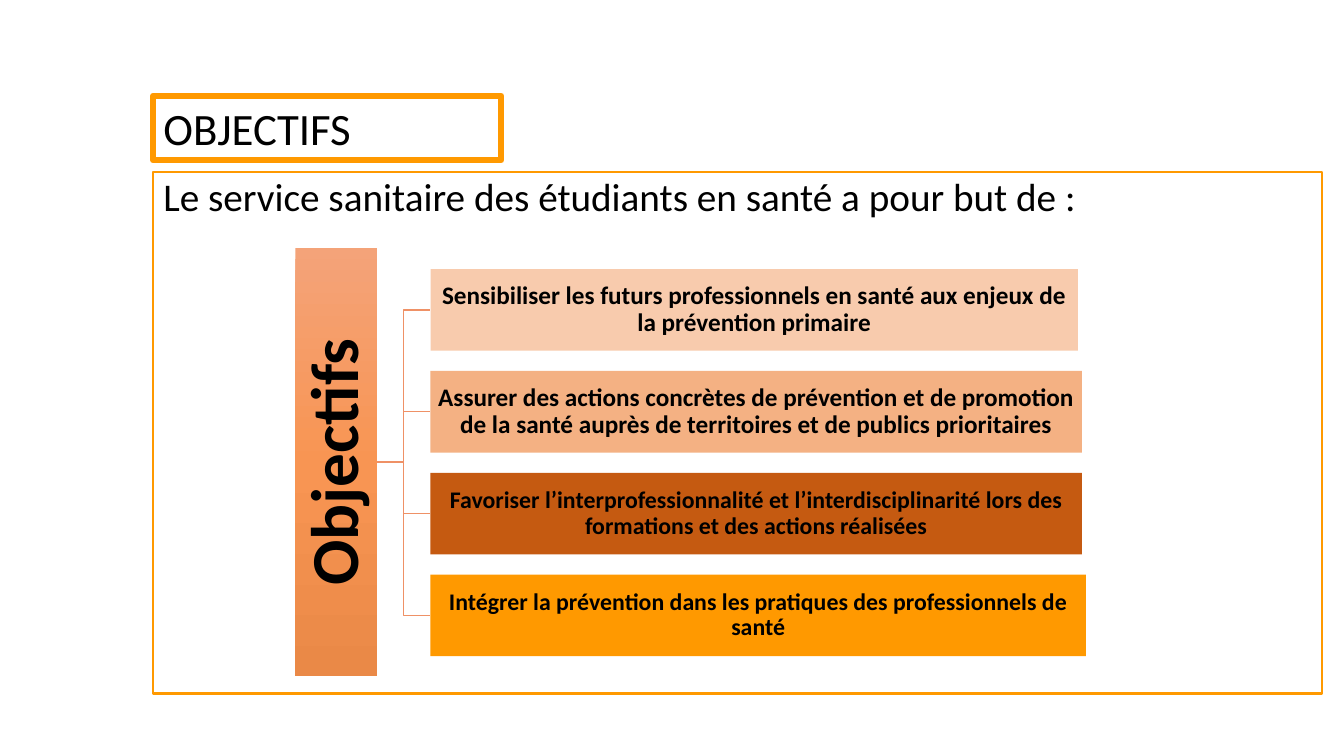
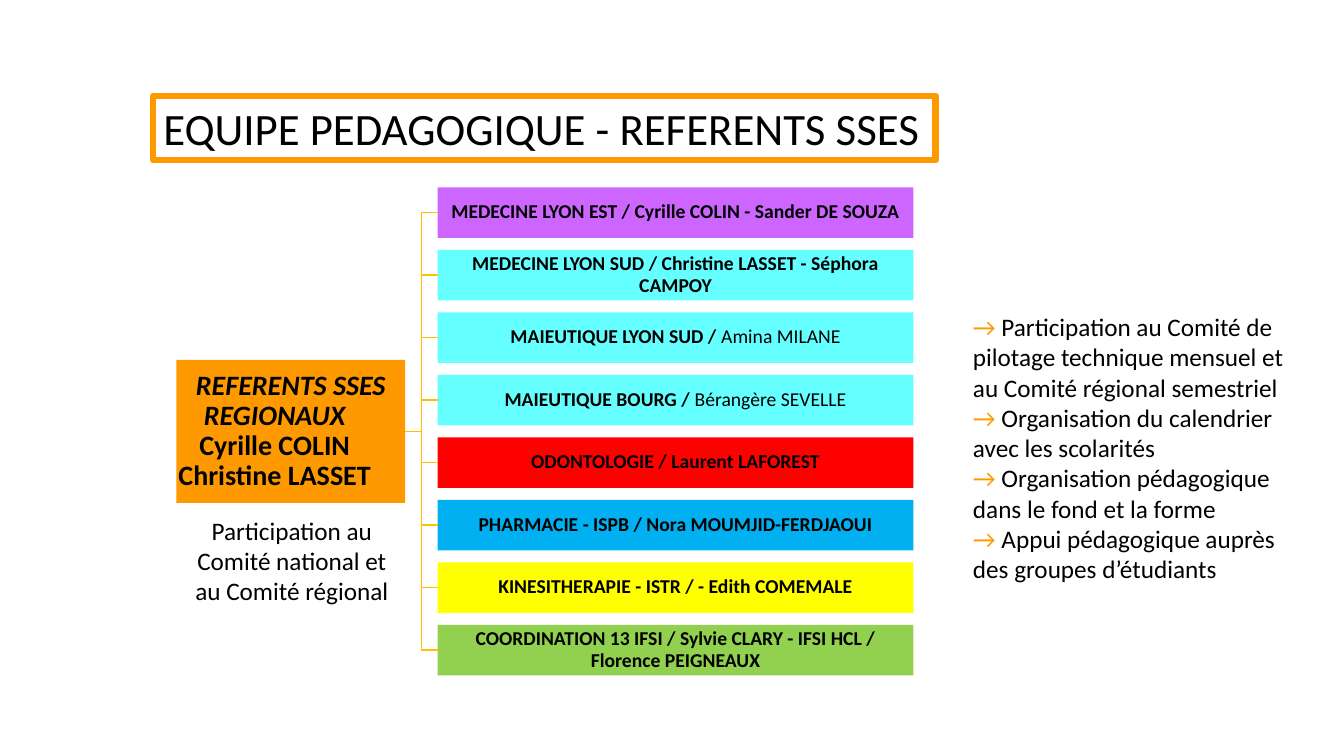
"""Build two slides on the aims and teaching team of the student health service."""
from copy import deepcopy

from lxml import etree
from pptx import Presentation
from pptx.dml.color import RGBColor
from pptx.enum import shapes, text
from pptx.oxml.ns import qn
from pptx.util import Inches, Pt

COLORS = {
    "text": "000000", "accent": "FF9900", "aim_line": "EF9166", "team_line": "FFC000",
    "peach": "F8CBAD", "apricot": "F4B183", "rust": "C55A11", "violet": "CC66FF",
    "cyan": "66FFFF", "red": "FF0000", "blue": "00B0F0", "yellow": "FFFF00",
    "green": "92D050",
}
HUB_GRADIENT = [(0, "F4A379"), (0.5, "F89553"), (1, "EA8947")]
LEFT, TITLE_TOP, TITLE_HEIGHT = 1.52, 0.95, 0.64
CENTER, START = text.PP_ALIGN.CENTER, text.PP_ALIGN.LEFT

INTRO = "Le service sanitaire des étudiants en santé a pour but de :"
AIMS = [
    ("Sensibiliser les futurs professionnels en santé aux enjeux de la prévention primaire",
     "peach", 6.42, 18),
    ("Assurer des actions concrètes de prévention et de promotion de la santé auprès de "
     "territoires et de publics prioritaires", "apricot", 6.46, 18),
    ("Favoriser l’interprofessionnalité et l’interdisciplinarité lors des formations et des "
     "actions réalisées", "rust", 6.46, 17),
    ("Intégrer la prévention dans les pratiques des professionnels de santé",
     "accent", 6.5, 17),
]
REGIONAL = [("REFERENTS SSES", True), ("REGIONAUX", True),
            ("Cyrille COLIN", False), ("Christine LASSET", False)]
REGIONAL_ROLE = "Participation au Comité national et au Comité régional"
REFERENTS = [
    ("MEDECINE LYON EST / Cyrille COLIN - Sander DE SOUZA", "", "violet"),
    ("MEDECINE LYON SUD / Christine LASSET - Séphora CAMPOY", "", "cyan"),
    ("MAIEUTIQUE LYON SUD / ", "Amina MILANE", "cyan"),
    ("MAIEUTIQUE BOURG / ", "Bérangère SEVELLE", "cyan"),
    ("ODONTOLOGIE / Laurent LAFOREST", "", "red"),
    ("PHARMACIE - ISPB / Nora MOUMJID-FERDJAOUI", "", "blue"),
    ("KINESITHERAPIE - ISTR / - Edith COMEMALE", "", "yellow"),
    ("COORDINATION 13 IFSI / Sylvie CLARY - IFSI HCL / Florence PEIGNEAUX", "", "green"),
]
MISSIONS = [
    "Participation au Comité de pilotage technique mensuel et au Comité régional semestriel",
    "Organisation du calendrier avec les scolarités",
    "Organisation pédagogique dans le fond et la forme",
    "Appui pédagogique auprès des groupes d’étudiants",
]


def rgb(name):
    return RGBColor.from_string(COLORS[name])


def apply(target, formats):
    for name, value in formats.items():
        setattr(target, name, value)


def place(shape, left, top, width, height):
    apply(shape, {"left": Inches(left), "top": Inches(top),
                  "width": Inches(width), "height": Inches(height)})


def outline(shape, width):
    shape.line.color.rgb = rgb("accent")
    shape.line.width = Pt(width)


def write(frame, paragraphs, size, align=START, spacing=1.0, inset=None,
          anchor=text.MSO_ANCHOR.TOP):
    """Fill a frame with paragraphs, each a list of (text, font formats, colour)."""
    apply(frame, {"word_wrap": True, "auto_size": text.MSO_AUTO_SIZE.NONE,
                  "vertical_anchor": anchor})
    if inset is not None:
        apply(frame, {f"margin_{side}": Inches(inset)
                      for side in ("left", "right", "top", "bottom")})
    for index, runs in enumerate(paragraphs):
        paragraph = frame.add_paragraph() if index else frame.paragraphs[0]
        properties = paragraph._p.get_or_add_pPr()
        properties.set("marL", "0")
        properties.set("indent", "0")
        etree.SubElement(properties, qn("a:buNone"))
        apply(paragraph, {"alignment": align, "line_spacing": spacing,
                          "space_before": Pt(0), "space_after": Pt(0)})
        for words, formats, color in runs:
            run = paragraph.add_run()
            run.text = words
            apply(run.font, {"name": "Calibri", "size": Pt(size), **formats})
            run.font.color.rgb = rgb(color)


def add_slide(deck, title, title_width):
    slide = deck.slides.add_slide(deck.slide_layouts[1])
    heading = slide.shapes.title
    place(heading, LEFT, TITLE_TOP, title_width, TITLE_HEIGHT)
    outline(heading, 4.5)
    write(heading.text_frame, [[(title, {}, "text")]], 32, anchor=text.MSO_ANCHOR.MIDDLE)
    return slide, slide.placeholders[1]


def add_box(slide, bounds, color, paragraphs, size):
    box = slide.shapes.add_shape(shapes.MSO_SHAPE.RECTANGLE, *map(Inches, bounds))
    box.shadow.inherit = False
    box.fill.solid()
    box.fill.fore_color.rgb = rgb(color)
    box.line.fill.background()
    write(box.text_frame, paragraphs, size, CENTER, 0.9, 0.01, text.MSO_ANCHOR.MIDDLE)
    return box


def shade(box, stops):
    box.fill.gradient()
    box.fill.gradient_angle = 270
    stop_list = box._element.spPr.find(qn("a:gradFill")).find(qn("a:gsLst"))
    stop_list.append(deepcopy(stop_list[0]))
    for stop, (position, color) in zip(box.fill.gradient_stops, stops):
        stop.position = position
        stop.color.rgb = RGBColor.from_string(color)


def join(slide, hub, branches, color):
    for branch in branches:
        link = slide.shapes.add_connector(shapes.MSO_CONNECTOR.ELBOW, 0, 0, 0, 0)
        link.begin_connect(hub, 3)
        link.end_connect(branch, 1)
        link.line.color.rgb = rgb(color)
        link.line.width = Pt(1)
        etree.SubElement(link._element.spPr, qn("a:effectLst"))


def build_aims(deck):
    slide, intro = add_slide(deck, "OBJECTIFS", 3.45)
    place(intro, LEFT, 1.71, 11.59, 5.17)
    outline(intro, 1.5)
    write(intro.text_frame, [[(INTRO, {}, "text")]], 28, spacing=0.9)
    bold = {"bold": True}
    hub = add_box(slide, (2.93, 2.46, 0.81, 4.25), "accent",
                  [[("Objectifs", bold, "text")]], 48)
    shade(hub, HUB_GRADIENT)
    hub.text_frame._txBody.bodyPr.set("vert", "vert270")
    branches = [add_box(slide, (4.27, 2.67 + 1.01 * row, width, 0.81), color,
                        [[(aim, bold, "text")]], size)
                for row, (aim, color, width, size) in enumerate(AIMS)]
    join(slide, hub, branches, "aim_line")


def build_team(deck):
    slide, missions = add_slide(deck, "EQUIPE PEDAGOGIQUE - REFERENTS SSES", 7.76)
    place(missions, 9.55, 3.04, 3.47, 2.83)
    write(missions.text_frame,
          [[("→", {}, "accent"), (f" {mission}", {}, "text")] for mission in MISSIONS], 18)
    hub = add_box(slide, (1.75, 3.57, 2.27, 1.42), "accent",
                  [[(words, {"bold": True, "italic": italic}, "text")]
                   for words, italic in REGIONAL], 20)
    region_line = hub.text_frame.paragraphs[1]
    region_line._p.get_or_add_pPr().set("marR", str(Inches(0.32)))
    branches = []
    for row, (school, person, color) in enumerate(REFERENTS):
        runs = [(school, {"bold": True}, "text")]
        if person:
            runs.append((person, {"bold": False}, "text"))
        branches.append(add_box(slide, (4.34, 1.86 + 0.62 * row, 4.72, 0.5),
                                color, [runs], 14))
    join(slide, hub, branches, "team_line")
    role = slide.shapes.add_textbox(*map(Inches, (1.81, 5.06, 2.17, 1.01)))
    write(role.text_frame, [[(REGIONAL_ROLE, {}, "text")]], 18, CENTER)


def main():
    deck = Presentation()
    apply(deck, {"slide_width": Inches(13.33), "slide_height": Inches(7.5)})
    build_aims(deck)
    build_team(deck)
    deck.save("out.pptx")


if __name__ == "__main__":
    main()
